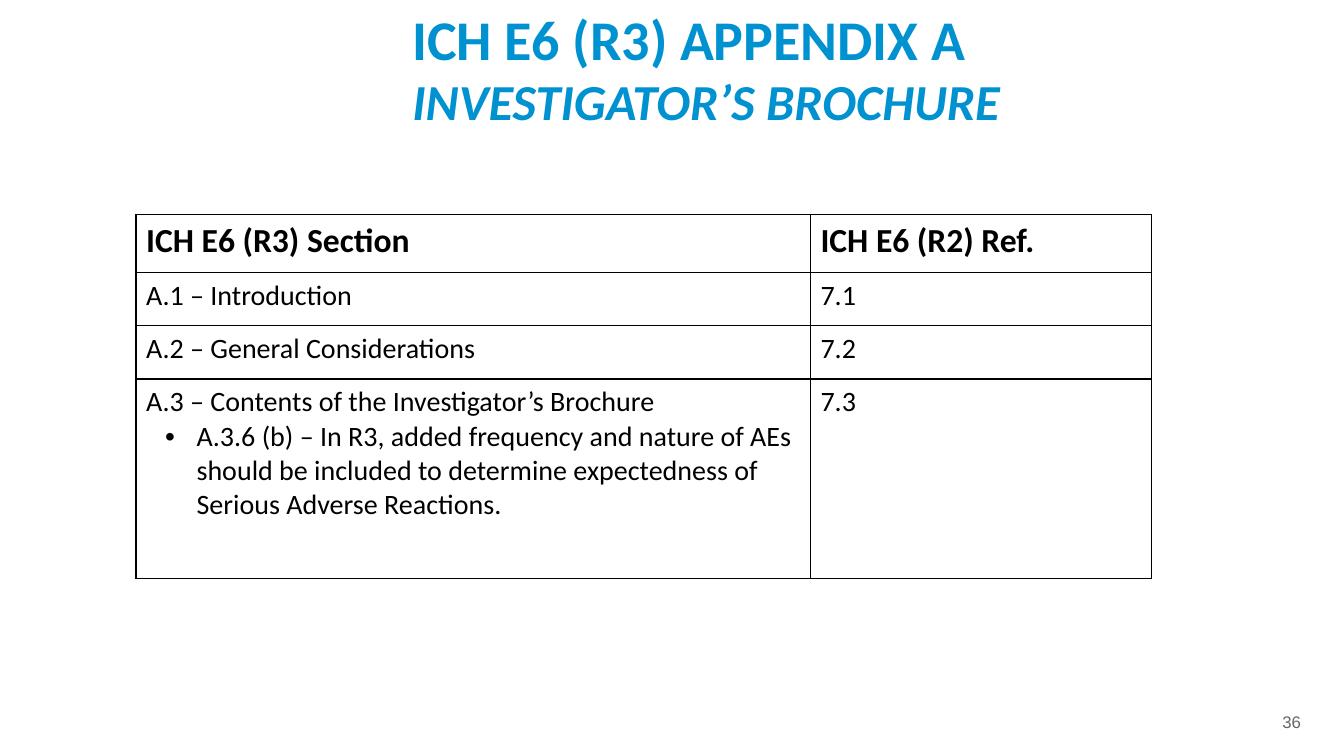
from lxml.etree import SubElement
from pptx import Presentation
from pptx.dml.color import RGBColor
from pptx.enum.text import MSO_ANCHOR, PP_ALIGN
from pptx.oxml.ns import qn
from pptx.util import Pt

TITLE_LINES = [
    # text, size, line spacing, italic
    ("ICH E6 (R3) APPENDIX A", 40, 46.6, False),
    ("INVESTIGATOR’S BROCHURE", 36, 41.9, True),
]
TABLE_ROWS = [
    (["ICH E6 (R3) Section"], ["ICH E6 (R2) Ref."]),
    (["A.1 – Introduction"], ["7.1"]),
    (["A.2 – General Considerations"], ["7.2"]),
    (
        [
            "A.3 – Contents of the Investigator’s Brochure",
            "A.3.6 (b) – In R3, added frequency and nature of AEs should be included "
            "to determine expectedness of Serious Adverse Reactions.",
        ],
        ["7.3"],
    ),
]
PAGE_NUMBER = "36"

COLORS = {"title": "0092D0", "text": "000000", "border": "000000", "number": "666666"}
COLUMN_WIDTHS = [481.7, 243.4]
ROW_HEIGHTS = [41, 38.2, 38.2, 142.6]
TABLE_LEFT, TABLE_TOP = 97.2, 153.4


def style_font(font, name, size, color, bold=False, italic=False):
    font.name = name
    font.size = Pt(size)
    font.color.rgb = RGBColor.from_string(COLORS[color])
    font.bold = bold
    font.italic = italic


def set_margins(frame, left, top):
    frame.margin_left, frame.margin_top = Pt(left), Pt(top)
    frame.margin_right = frame.margin_bottom = 0


def add_bullet(para):
    properties = para._p.get_or_add_pPr()
    properties.set("marL", str(Pt(36)))
    properties.set("indent", str(Pt(-22.5)))
    SubElement(properties, qn("a:buFont"), typeface="Arial")
    SubElement(properties, qn("a:buChar"), char="•")


def add_borders(cell):
    properties = cell._tc.get_or_add_tcPr()
    for position, side in enumerate(("lnL", "lnR", "lnT", "lnB")):
        line = SubElement(properties, qn(f"a:{side}"), w=str(Pt(1)))
        fill = SubElement(line, qn("a:solidFill"))
        SubElement(fill, qn("a:srgbClr"), val=COLORS["border"])
        properties.insert(position, line)


def add_title(page):
    title = page.shapes.title
    title.left, title.top, title.width, title.height = Pt(290.9), Pt(-1.4), Pt(548), Pt(94.3)
    frame = title.text_frame
    set_margins(frame, 3.6, 6)
    frame.vertical_anchor = MSO_ANCHOR.TOP
    frame.text = "\n".join(line[0] for line in TITLE_LINES)
    for para, (_, size, spacing, italic) in zip(frame.paragraphs, TITLE_LINES):
        para.alignment = PP_ALIGN.LEFT
        para.line_spacing = Pt(spacing)
        para.space_before = 0
        style_font(para.runs[0].font, "Calibri", size, "title", True, italic)


def fill_cell(cell, lines, is_header):
    cell.fill.background()
    add_borders(cell)
    set_margins(cell, 7.2, 4.4)
    cell.vertical_anchor = MSO_ANCHOR.TOP
    cell.text_frame.text = "\n".join(lines)
    for index, para in enumerate(cell.text_frame.paragraphs):
        if index:
            add_bullet(para)
        style_font(para.runs[0].font, "Calibri", 24 if is_header else 20, "text", is_header)


def add_section_table(page):
    table = page.shapes.add_table(
        len(TABLE_ROWS), len(COLUMN_WIDTHS), Pt(TABLE_LEFT), Pt(TABLE_TOP),
        Pt(sum(COLUMN_WIDTHS)), Pt(sum(ROW_HEIGHTS)),
    ).table
    table.horz_banding = False
    for column, width in zip(table.columns, COLUMN_WIDTHS):
        column.width = Pt(width)
    for index, (row, height, contents) in enumerate(zip(table.rows, ROW_HEIGHTS, TABLE_ROWS)):
        row.height = Pt(height)
        for cell, lines in zip(row.cells, contents):
            fill_cell(cell, lines, is_header=index == 0)


def add_page_number(page):
    box = page.shapes.add_textbox(Pt(913), Pt(508.3), Pt(20.2), Pt(15.1))
    frame = box.text_frame
    frame.word_wrap = True
    set_margins(frame, 2.9, 0)
    frame.text = PAGE_NUMBER
    para = frame.paragraphs[0]
    para.line_spacing = Pt(14.2)
    style_font(para.runs[0].font, "Arial", 12, "number")


def main():
    deck = Presentation()
    deck.slide_width, deck.slide_height = Pt(960), Pt(540)
    page = deck.slides.add_slide(deck.slide_layouts[5])
    add_title(page)
    add_section_table(page)
    add_page_number(page)
    deck.save("out.pptx")


if __name__ == "__main__":
    main()
